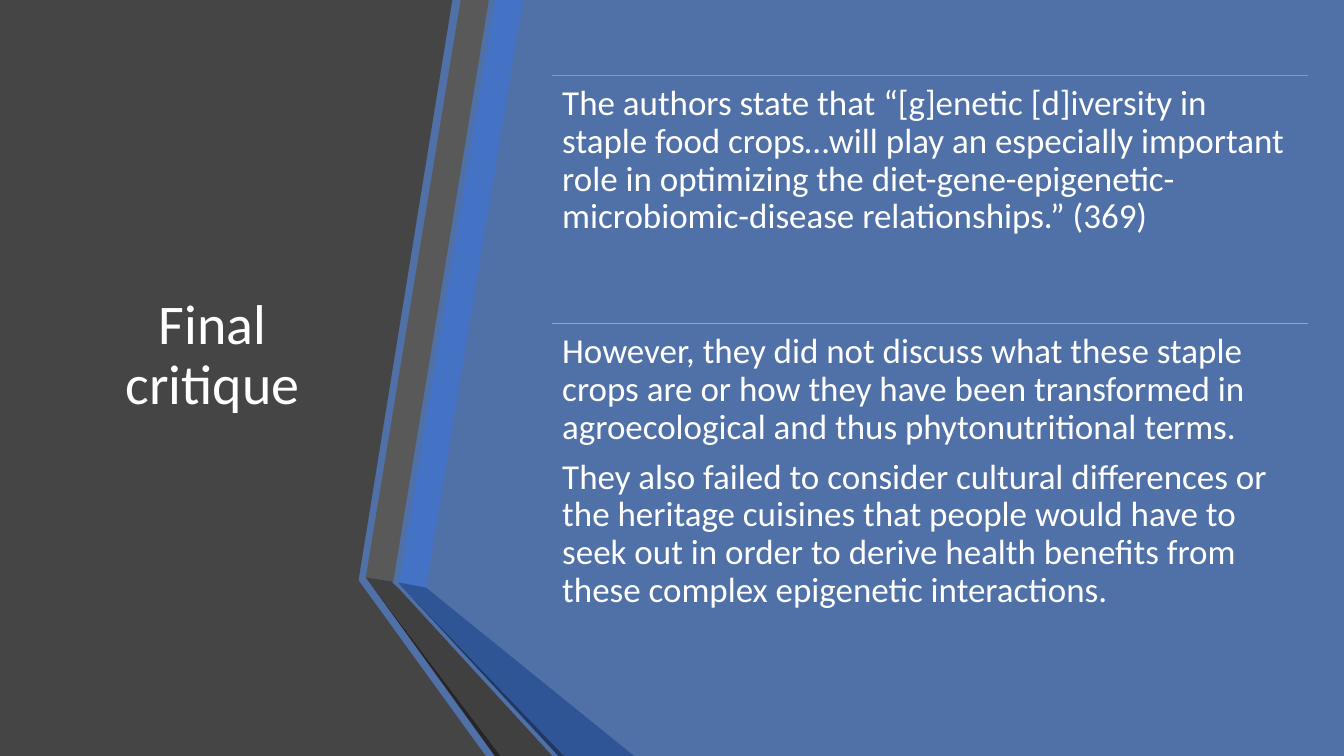
from pptx import Presentation
from pptx.dml.color import RGBColor
from pptx.enum.shapes import MSO_CONNECTOR
from pptx.enum.text import MSO_ANCHOR, MSO_AUTO_SIZE, PP_ALIGN
from pptx.oxml.ns import qn
from pptx.util import Cm, Pt
from lxml import etree

LINE = MSO_CONNECTOR.STRAIGHT
TOP, MID = MSO_ANCHOR.TOP, MSO_ANCHOR.MIDDLE
FIXED = MSO_AUTO_SIZE.NONE
LEFT, CENTER = PP_ALIGN.LEFT, PP_ALIGN.CENTER

WIDE, HIGH = 33.87, 19.05
FONT, WHITE = "Calibri", "FFFFFF"

FACETS = [
    ("454545", [(0, 0), (11.4, 0), (9.04, 14.6), (9.04, 14.63),
                (12.24, HIGH), (0, HIGH)]),
    ("4472C4", [(10.06, 14.68), (10.74, 14.81), (13.18, 0), (12.47, 0)]),
    ("595959", [(12.32, 0), (11.61, 0), (9.22, 14.55), (9.91, 14.66)]),
    ("262626", [(9.22, 14.55), (12.47, HIGH), (12.62, HIGH)]),
    ("203864", [(10.06, 14.71), (14.07, HIGH), (14.22, HIGH)]),
    ("2F5597", [(10.06, 14.71), (14.22, HIGH), (15.98, HIGH),
                (10.74, 14.81), (10.06, 14.68)]),
    ("404040", [(13.92, HIGH), (10.03, 14.81), (9.88, 14.68),
                (9.91, 14.66), (9.22, 14.55), (12.62, HIGH)]),
]

POINTS = [
    ("ED7D31", 6.25, [
        "The authors state that “[g]enetic [d]iversity in staple food "
        "crops…will play an especially important role in optimizing the "
        "diet-gene-epigenetic-microbiomic-disease relationships.” (369)",
    ]),
    ("A5A5A5", 7.92, [
        "However, they did not discuss what these staple crops are or how "
        "they have been transformed in agroecological and thus "
        "phytonutritional terms.",
        "They also failed to consider cultural differences or the heritage "
        "cuisines that people would have to seek out in order to derive "
        "health benefits from these complex epigenetic interactions.",
    ]),
]


def paint(part, tone):
    part.solid()
    part.fore_color.rgb = RGBColor.from_string(tone)


def write(frame, texts, size, align, anchor, after=0):
    frame.word_wrap = True
    frame.auto_size = FIXED
    frame.vertical_anchor = anchor
    for side in ("left", "top", "right", "bottom"):
        setattr(frame, f"margin_{side}", Cm(0.25))
    for i, text in enumerate(texts):
        para = frame.add_paragraph() if i else frame.paragraphs[0]
        para.alignment = align
        para.line_spacing = 0.9
        para.space_before = Pt(0)
        para.space_after = Pt(after)
        run = para.add_run()
        run.text = text
        run.font.name = FONT
        run.font.size = Pt(size)
        run.font.color.rgb = RGBColor.from_string(WHITE)


def add_panel(slide, x, y):
    for tone, spots in FACETS:
        spots = [(Cm(x + a), Cm(y + b)) for a, b in spots]
        pen = slide.shapes.build_freeform(*spots[0])
        pen.add_line_segments(spots[1:], close=True)
        facet = pen.convert_to_shape()
        facet.shadow.inherit = False
        paint(facet.fill, tone)
        facet.line.fill.background()


def add_title(slide, x, y, wide, high):
    title = slide.shapes.title
    title.left, title.top = Cm(x), Cm(y)
    title.width, title.height = Cm(wide), Cm(high)
    write(title.text_frame, ["Final critique"], 40, CENTER, MID)
    title.element.getparent().append(title.element)


def add_rule(slide, x, y, wide, tone):
    rule = slide.shapes.add_connector(LINE, Cm(x), Cm(y), Cm(x + wide), Cm(y))
    paint(rule.line.fill, tone)
    rule.line.width = Pt(1)
    etree.SubElement(rule.element.spPr, qn("a:effectLst"))


def add_points(slide, x, y, wide):
    for tone, high, texts in POINTS:
        add_rule(slide, x, y, wide, tone)
        box = slide.shapes.add_textbox(Cm(x), Cm(y), Cm(wide), Cm(high))
        write(box.text_frame, texts, 25, LEFT, TOP, 8.75)
        y += high


def main():
    deck = Presentation()
    deck.slide_width, deck.slide_height = Cm(WIDE), Cm(HIGH)
    slide = deck.slides.add_slide(deck.slide_layouts[5])
    paint(slide.background.fill, "5070A8")
    add_panel(slide, 0, 0)
    add_title(slide, 1.5, 1.9, 7.72, 14.17)
    add_points(slide, 13.92, 1.9, 19.05)
    deck.save("out.pptx")


if __name__ == "__main__":
    main()
